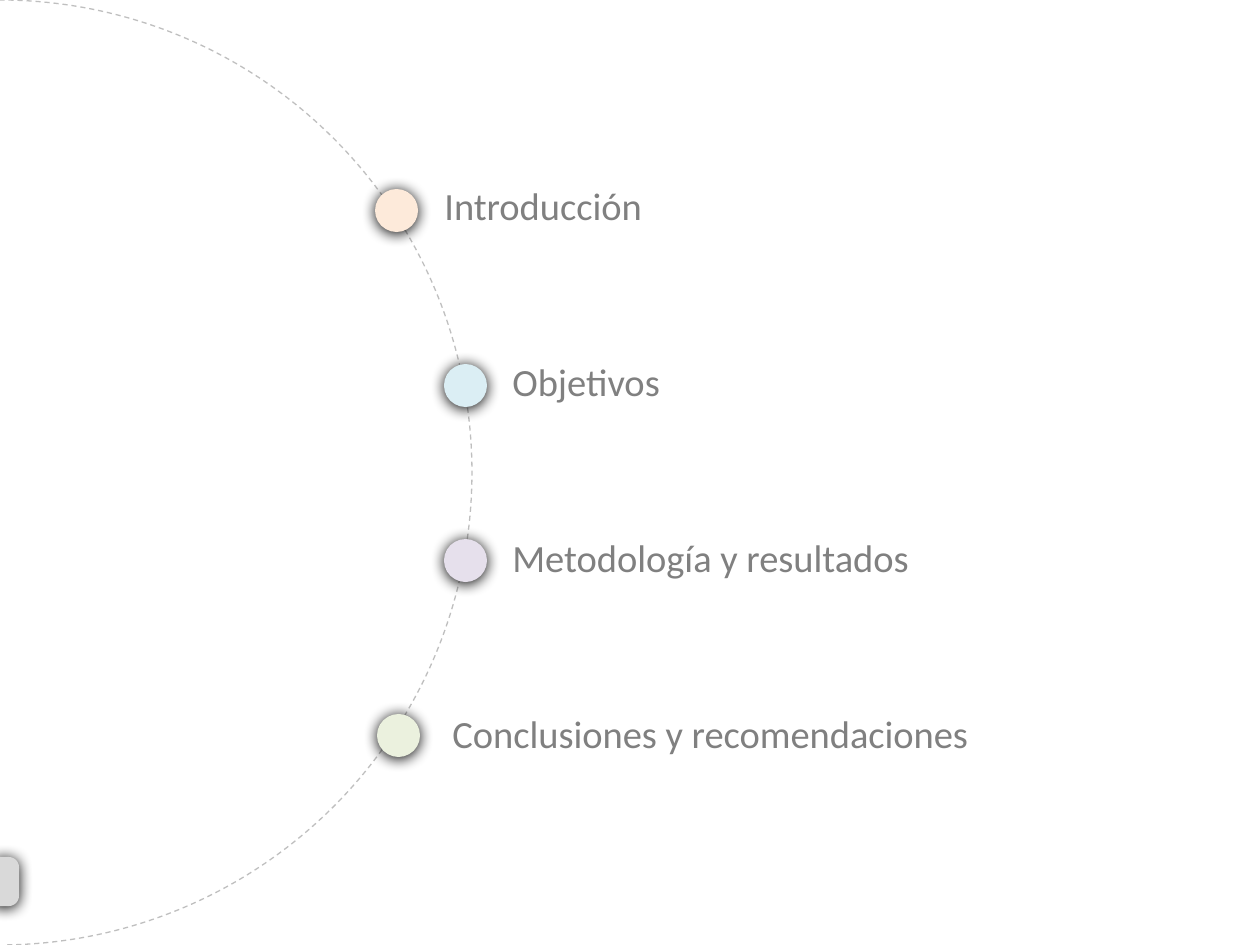
from dataclasses import dataclass

from lxml import etree
from pptx import Presentation
from pptx import util as u
from pptx.dml.color import RGBColor
from pptx.enum import dml, shapes, text
from pptx.oxml import ns

SCALE = 914400 / 126


@dataclass(frozen=True)
class Theme:
    font: str = "Calibri"
    label_size: int = 22
    label: str = "808080"
    arc_fill: str = "FFFFFF"
    arc_line: str = "BFBFBF"
    arc_width: float = 0.75
    tab: str = "D9D9D9"
    shadow: str = "000000"
    shadow_blur: float = 8.5
    shadow_distance: float = 1


@dataclass(frozen=True)
class Topic:
    title: str
    color: str
    dot_left: int
    label_left: int
    label_width: int


THEME = Theme()
PAGE_WIDTH, PAGE_HEIGHT = 1260, 945
DOT_SIZE, DOT_TOP, DOT_STEP = 43, 189, 175
LABEL_HEIGHT, LABEL_TOP, LABEL_STEP = 59, 176, 176

TOPICS = [
    Topic("Introducción", "FDEADA", 375, 432, 640),
    Topic("Objetivos", "DBEEF4", 444, 500, 612),
    Topic("Metodología y resultados", "E6E0EC", 444, 500, 529),
    Topic("Conclusiones y recomendaciones", "EBF1DE", 377, 440, 573),
]


def px(length: int) -> u.Emu:
    return u.Emu(round(length * SCALE))


def rgb(color: str) -> RGBColor:
    return RGBColor.from_string(color)


def add_filled(page, kind, left: int, top: int, width: int, height: int, color: str):
    shape = page.shapes.add_shape(kind, px(left), px(top), px(width), px(height))
    shape.shadow.inherit = False
    shape.fill.solid()
    shape.fill.fore_color.rgb = rgb(color)
    shape.line.fill.background()
    return shape


def add_shadow(shape) -> None:
    effects = shape.element.spPr.find(ns.qn("a:effectLst"))
    shadow = etree.SubElement(
        effects,
        ns.qn("a:outerShdw"),
        blurRad=str(u.Pt(THEME.shadow_blur)),
        dist=str(u.Pt(THEME.shadow_distance)),
        dir="5400000",
        algn="ctr",
        rotWithShape="0",
    )
    etree.SubElement(shadow, ns.qn("a:srgbClr"), val=THEME.shadow)


def add_arc(page) -> None:
    arc = add_filled(
        page, shapes.MSO_SHAPE.ARC,
        -PAGE_HEIGHT // 2, 0, PAGE_HEIGHT, PAGE_HEIGHT, THEME.arc_fill,
    )
    arc.adjustments[0] = 162
    arc.adjustments[1] = 53.71
    arc.line.color.rgb = rgb(THEME.arc_line)
    arc.line.width = u.Pt(THEME.arc_width)
    arc.line.dash_style = dml.MSO_LINE.DASH


def add_label(page, topic: Topic, row: int) -> None:
    box = page.shapes.add_textbox(
        px(topic.label_left), px(LABEL_TOP + row * LABEL_STEP),
        px(topic.label_width), px(LABEL_HEIGHT),
    )
    box.text_frame.word_wrap = True
    box.text_frame.auto_size = text.MSO_AUTO_SIZE.SHAPE_TO_FIT_TEXT
    para = box.text_frame.paragraphs[0]
    span = para.add_run()
    span.text = topic.title
    span.font.name = THEME.font
    span.font.size = u.Pt(THEME.label_size)
    span.font.color.rgb = rgb(THEME.label)


def add_dot(page, topic: Topic, row: int) -> None:
    dot = add_filled(
        page, shapes.MSO_SHAPE.OVAL,
        topic.dot_left, DOT_TOP + row * DOT_STEP, DOT_SIZE, DOT_SIZE, topic.color,
    )
    add_shadow(dot)


def add_tab(page) -> None:
    tab = add_filled(
        page, shapes.MSO_SHAPE.ROUNDED_RECTANGLE, -10, 857, 29, 49, THEME.tab
    )
    tab.adjustments[0] = 0.35
    tab.rotation = 180
    add_shadow(tab)


def main() -> None:
    deck = Presentation()
    deck.slide_width, deck.slide_height = px(PAGE_WIDTH), px(PAGE_HEIGHT)
    page = deck.slides.add_slide(deck.slide_layouts[6])
    add_arc(page)
    for row, topic in enumerate(TOPICS):
        add_label(page, topic, row)
    for row, topic in enumerate(TOPICS):
        add_dot(page, topic, row)
    add_tab(page)
    deck.save("out.pptx")


if __name__ == "__main__":
    main()
